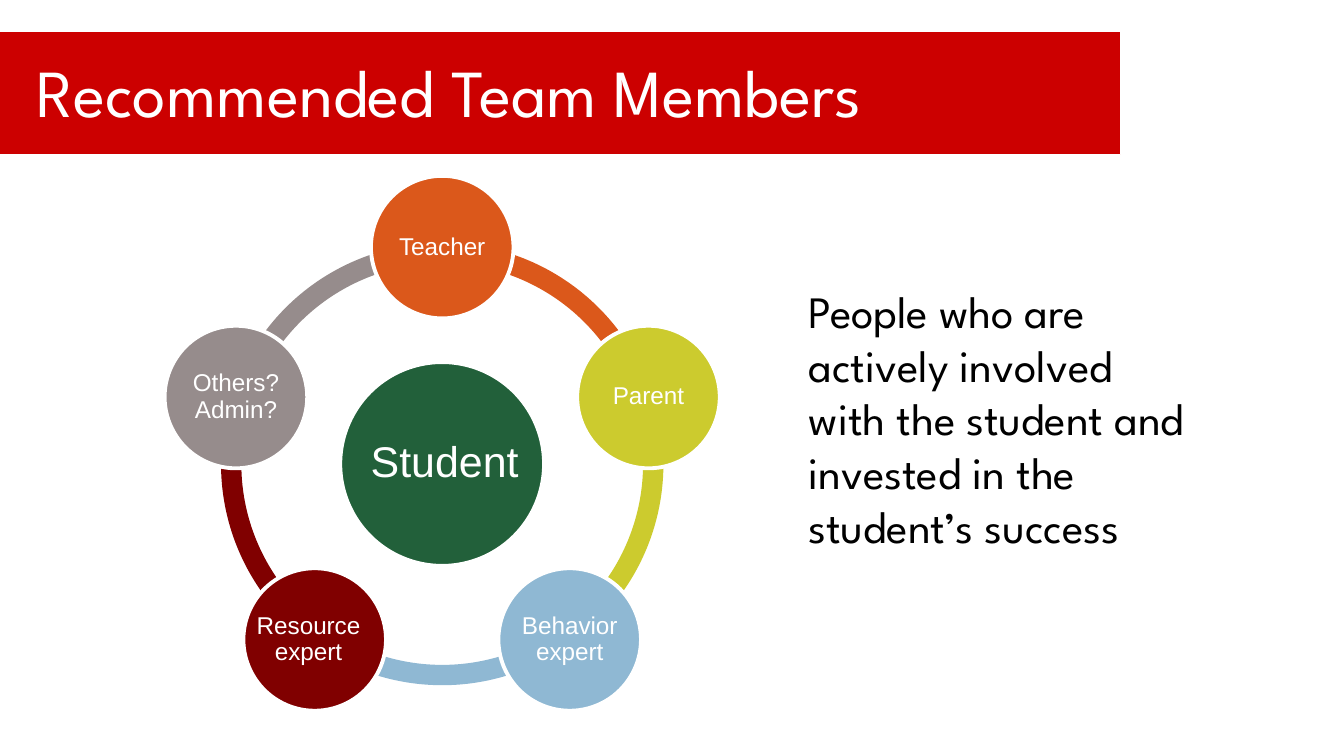
"""Build the slide on recommended team members around a student."""
from math import cos, radians, sin

from pptx import Presentation
from pptx.dml.color import RGBColor
from pptx.enum.shapes import MSO_SHAPE
from pptx.enum.text import MSO_ANCHOR, MSO_AUTO_SIZE, PP_ALIGN
from pptx.util import Pt

WHITE = RGBColor(0xFF, 0xFF, 0xFF)
BLACK = RGBColor(0x00, 0x00, 0x00)
RED = RGBColor(0xCC, 0x00, 0x00)
GREEN = RGBColor(0x22, 0x60, 0x3A)
ORANGE = RGBColor(0xDB, 0x58, 0x1B)
LIME = RGBColor(0xCC, 0xCB, 0x2E)
BLUE = RGBColor(0x8F, 0xB8, 0xD3)
MAROON = RGBColor(0x80, 0x00, 0x00)
GREY = RGBColor(0x96, 0x8C, 0x8C)

TITLE = "Recommended Team Members"
SUMMARY = ("People who are actively involved with the student "
           "and invested in the student’s success")
MEMBERS = [
    {"lines": ["Teacher"], "color": ORANGE},
    {"lines": ["Parent"], "color": LIME},
    {"lines": ["Behavior expert"], "color": BLUE},
    {"lines": ["Resource expert"], "color": MAROON, "width": 60.5, "shift": -3.3},
    {"lines": ["Others?", "Admin?"], "color": GREY},
]

HEADING_FONT, LABEL_FONT = "League Spartan", "Arial"
CENTER_X, CENTER_Y = 236.9, 248.6
RING, ORBIT, HUB, NODE = 237, 116.2, 109.2, 76.4
STEP = 360 / len(MEMBERS)
ARC_UNIT = 0.6


def centered(x, y, width, height):
    return [Pt(v) for v in (x - width / 2, y - height / 2, width, height)]


def add_solid(slide, kind, box, color, outline=None):
    solid = slide.shapes.add_shape(kind, *box)
    solid.shadow.inherit = False
    solid.fill.solid()
    solid.fill.fore_color.rgb = color
    if outline:
        solid.line.color.rgb = WHITE
        solid.line.width = Pt(outline)
    else:
        solid.line.fill.background()
    return solid


def write(frame, lines, font, size, color, inset=None, **paragraph_format):
    frame.word_wrap = True
    frame.auto_size = MSO_AUTO_SIZE.NONE
    sides = (7.2, 3.6) if inset is None else (inset, inset)
    margins = {"margin_left": sides[0], "margin_right": sides[0],
               "margin_top": sides[1], "margin_bottom": sides[1]}
    for name, value in margins.items():
        setattr(frame, name, Pt(value))
    frame.text = "\n".join(lines)
    for paragraph in frame.paragraphs:
        for name, value in paragraph_format.items():
            setattr(paragraph, name, value)
        run_font = paragraph.runs[0].font
        for name, value in {"name": font, "size": Pt(size)}.items():
            setattr(run_font, name, value)
        run_font.color.rgb = color


def add_label(slide, box, lines, size, inset):
    frame = slide.shapes.add_textbox(*box).text_frame
    write(frame, lines, LABEL_FONT, size, WHITE, inset,
          alignment=PP_ALIGN.CENTER, line_spacing=0.9)
    frame.vertical_anchor = MSO_ANCHOR.MIDDLE


def add_heading(slide):
    band = add_solid(slide, MSO_SHAPE.RECTANGLE,
                     [Pt(v) for v in (-5.8, 16.6, 606.2, 66.2)], RED, 0.75)
    slide.shapes._spTree.insert(2, band._element)
    title = slide.shapes.title
    place = {"left": 12.2, "top": 19.4, "width": 588.2, "height": 58.3}
    for name, value in place.items():
        setattr(title, name, Pt(value))
    write(title.text_frame, [TITLE], HEADING_FONT, 36, WHITE,
          alignment=PP_ALIGN.LEFT)
    title.text_frame.vertical_anchor = MSO_ANCHOR.MIDDLE


def add_team(slide):
    angles = [270 + STEP * i for i in range(len(MEMBERS))]
    for angle, member in reversed(list(zip(angles, MEMBERS))):
        arc = add_solid(slide, MSO_SHAPE.BLOCK_ARC,
                        centered(CENTER_X, CENTER_Y, RING, RING), member["color"])
        arc.adjustments[0] = angle % 360 * ARC_UNIT
        arc.adjustments[1] = (angle + STEP) % 360 * ARC_UNIT
        arc.adjustments[2] = 0.046

    add_solid(slide, MSO_SHAPE.OVAL, centered(CENTER_X, CENTER_Y, HUB, HUB), GREEN, 2.08)
    add_label(slide, centered(CENTER_X + 1.4, CENTER_Y, 86.4, 77), ["Student"], 23, 2.2)

    for angle, member in zip(angles, MEMBERS):
        x = CENTER_X + ORBIT * cos(radians(angle))
        y = CENTER_Y + ORBIT * sin(radians(angle))
        add_solid(slide, MSO_SHAPE.OVAL, centered(x, y, NODE, NODE), member["color"], 2.08)
        label_box = centered(x + member.get("shift", 0), y, member.get("width", 54), 54)
        add_label(slide, label_box, member["lines"], 13, 1.4)


def main():
    deck = Presentation()
    deck.slide_width, deck.slide_height = Pt(720), Pt(405)
    slide = deck.slides.add_slide(deck.slide_layouts[5])
    add_heading(slide)
    add_team(slide)
    summary = slide.shapes.add_textbox(Pt(426.2), Pt(148.3), Pt(216), Pt(181.4))
    write(summary.text_frame, [SUMMARY], HEADING_FONT, 24, BLACK)
    deck.save("out.pptx")


if __name__ == "__main__":
    main()
